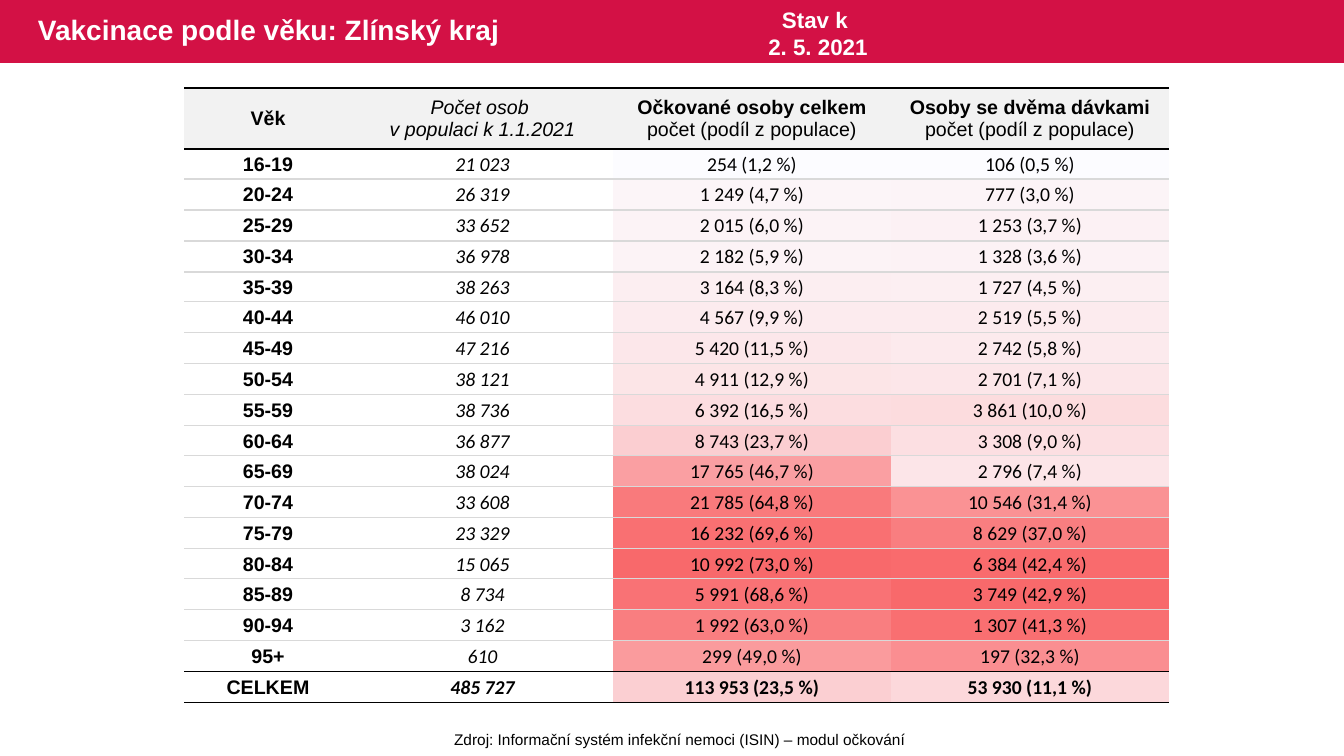
"""Build the slide on vaccination by age in the Zlín region."""
import pptx
import pptx.dml.color
import pptx.enum.shapes
import pptx.enum.text
import pptx.oxml
import pptx.oxml.ns
import pptx.util

RGBColor = pptx.dml.color.RGBColor
ALIGN = pptx.enum.text.PP_ALIGN
ANCHOR = pptx.enum.text.MSO_ANCHOR
PX = 12192000 / 1344
CRIMSON = RGBColor(0xD3, 0x11, 0x45)
WHITE = RGBColor(0xFF, 0xFF, 0xFF)
BLACK = RGBColor(0x00, 0x00, 0x00)
HEADER_GREY = RGBColor(0xF2, 0xF2, 0xF2)
LINE_GREY = RGBColor(0xD9, 0xD9, 0xD9)
NO_STYLE = "{2D5ABB26-0587-4C30-8999-92F81FD0307C}"

HEADER = ["Věk", "Počet osob \nv populaci k 1.1.2021",
          "Očkované osoby celkem\npočet (podíl z populace)",
          "Osoby se dvěma dávkami\npočet (podíl z populace)"]
ROWS = [
    ("16-19", "21 023", "254 (1,2 %)", "106 (0,5 %)"),
    ("20-24", "26 319", "1 249 (4,7 %)", "777 (3,0 %)"),
    ("25-29", "33 652", "2 015 (6,0 %)", "1 253 (3,7 %)"),
    ("30-34", "36 978", "2 182 (5,9 %)", "1 328 (3,6 %)"),
    ("35-39", "38 263", "3 164 (8,3 %)", "1 727 (4,5 %)"),
    ("40-44", "46 010", "4 567 (9,9 %)", "2 519 (5,5 %)"),
    ("45-49", "47 216", "5 420 (11,5 %)", "2 742 (5,8 %)"),
    ("50-54", "38 121", "4 911 (12,9 %)", "2 701 (7,1 %)"),
    ("55-59", "38 736", "6 392 (16,5 %)", "3 861 (10,0 %)"),
    ("60-64", "36 877", "8 743 (23,7 %)", "3 308 (9,0 %)"),
    ("65-69", "38 024", "17 765 (46,7 %)", "2 796 (7,4 %)"),
    ("70-74", "33 608", "21 785 (64,8 %)", "10 546 (31,4 %)"),
    ("75-79", "23 329", "16 232 (69,6 %)", "8 629 (37,0 %)"),
    ("80-84", "15 065", "10 992 (73,0 %)", "6 384 (42,4 %)"),
    ("85-89", "8 734", "5 991 (68,6 %)", "3 749 (42,9 %)"),
    ("90-94", "3 162", "1 992 (63,0 %)", "1 307 (41,3 %)"),
    ("95+", "610", "299 (49,0 %)", "197 (32,3 %)"),
    ("CELKEM", "485 727", "113 953 (23,5 %)", "53 930 (11,1 %)"),
]
HEAT = [[RGBColor.from_string(h) for h in pair.split()] for pair in (
    "FCFCFF FCFCFF", "FCF5F8 FCF4F7", "FCF3F6 FCF1F4", "FCF3F6 FCF2F5",
    "FCEEF1 FCEFF2", "FCEBEE FCEBEE", "FCE7EA FCEAED", "FCE5E7 FCE6E9",
    "FCDDE0 FCDCDE", "FBCED1 FCDFE2", "FA9FA2 FCE5E8", "F97A7C FA9294",
    "F97072 F97E80", "F8696B F96B6D", "F97275 F8696B", "F97E80 F96F71",
    "FA9B9D FA8E91", "FBCFD2 FCD8DB")]
N = len(ROWS)
BODY_HEIGHTS = [554 * (i + 1) // N - 554 * i // N for i in range(N)]


def write(tf, text, align, fmt, first=None):
    for i, line in enumerate(text.split("\n")):
        p = tf.paragraphs[0] if i == 0 else tf.add_paragraph()
        p.alignment = align
        r = p.add_run()
        r.text = line
        r.font.color.rgb = fmt["color"]
        line_fmt = {**fmt, **(first or {})} if i == 0 else fmt
        for name in ("name", "size", "bold", "italic"):
            setattr(r.font, name, line_fmt.get(name))


def add_grid(s, x, y, widths, heights):
    frame = s.shapes.add_table(len(heights), len(widths), *[
        round(v * PX) for v in (x, y, sum(widths), sum(heights))])
    tbl = frame.table
    tbl.first_row = tbl.horz_banding = False
    frame._element.find(".//" + pptx.oxml.ns.qn("a:tableStyleId")).text = NO_STYLE
    for col, width in zip(tbl.columns, widths):
        col.width = round(width * PX)
    for row, height in zip(tbl.rows, heights):
        row.height = round(height * PX)
    for cell in tbl.iter_cells():
        cell.vertical_anchor = ANCHOR.MIDDLE
        for side, margin in {"left": 1, "right": 1, "top": 1, "bottom": 0}.items():
            setattr(cell, "margin_" + side, round(margin * PX))
    return tbl


prs = pptx.Presentation()
prs.slide_width, prs.slide_height = round(1344 * PX), round(756 * PX)
s = prs.slides.add_slide(prs.slide_layouts[6])

band = s.shapes.add_shape(pptx.enum.shapes.MSO_SHAPE.RECTANGLE, 0, 0,
                          prs.slide_width, round(63 * PX))
band.shadow.inherit = False
band.fill.solid()
band.fill.fore_color.rgb = CRIMSON
band.line.fill.background()

heat_tbl = add_grid(s, 613, 148, [278, 278], BODY_HEIGHTS)
for i, pair in enumerate(HEAT):
    for j, color in enumerate(pair):
        cell = heat_tbl.cell(i, j)
        cell.fill.solid()
        cell.fill.fore_color.rgb = color
        cell.text_frame.paragraphs[0]._p.get_or_add_endParaRPr().set("sz", "1200")

white_bold = {"name": "Arial", "bold": True, "color": WHITE}
for text, box, size, align, anchor, wrap, fmt, spacing in (
        ("Vakcinace podle věku: Zlínský kraj", (28, 0, 820, 63), 20,
         ALIGN.LEFT, ANCHOR.MIDDLE, True, white_bold, 0.9),
        ("Stav k \n2. 5. 2021", (743, 1, 150, 64), 16,
         ALIGN.CENTER, ANCHOR.TOP, True, white_bold, None),
        ("Zdroj: Informační systém infekční nemoci (ISIN) – modul očkování",
         (443, 725, 474, 29), 11, ALIGN.CENTER, ANCHOR.TOP, False,
         {"name": "Arial", "color": BLACK}, None)):
    tf = s.shapes.add_textbox(*[round(v * PX) for v in box]).text_frame
    tf.word_wrap = wrap
    tf.vertical_anchor = anchor
    write(tf, text, align, {**fmt, "size": pptx.util.Pt(size)})
    tf.paragraphs[0].line_spacing = spacing

tbl = add_grid(s, 184, 88, [168, 261, 278, 278], [61] + BODY_HEIGHTS)
black_edges = {0, 1, N, N + 1}
for i, row in enumerate([HEADER] + ROWS):
    for j, text in enumerate(row):
        cell = tbl.cell(i, j)
        if i == 0:
            cell.fill.solid()
            cell.fill.fore_color.rgb = HEADER_GREY
        else:
            cell.fill.background()
        write(cell.text_frame, text, ALIGN.CENTER, {
            "name": "Arial" if i == 0 or j == 0 else "Calibri",
            "size": pptx.util.Pt(14), "color": BLACK,
            "bold": j == 0 or i == N, "italic": j == 1},
            {"bold": True} if i == 0 and j > 1 else None)
        for k, (tag, edge) in enumerate((("lnT", i), ("lnB", i + 1))):
            color = BLACK if edge in black_edges else LINE_GREY
            cell._tc.get_or_add_tcPr().insert(k, pptx.oxml.parse_xml(
                f'<a:{tag} {pptx.oxml.ns.nsdecls("a")} w="12700"><a:solidFill>'
                f'<a:srgbClr val="{color}"/></a:solidFill></a:{tag}>'))

prs.save("out.pptx")
